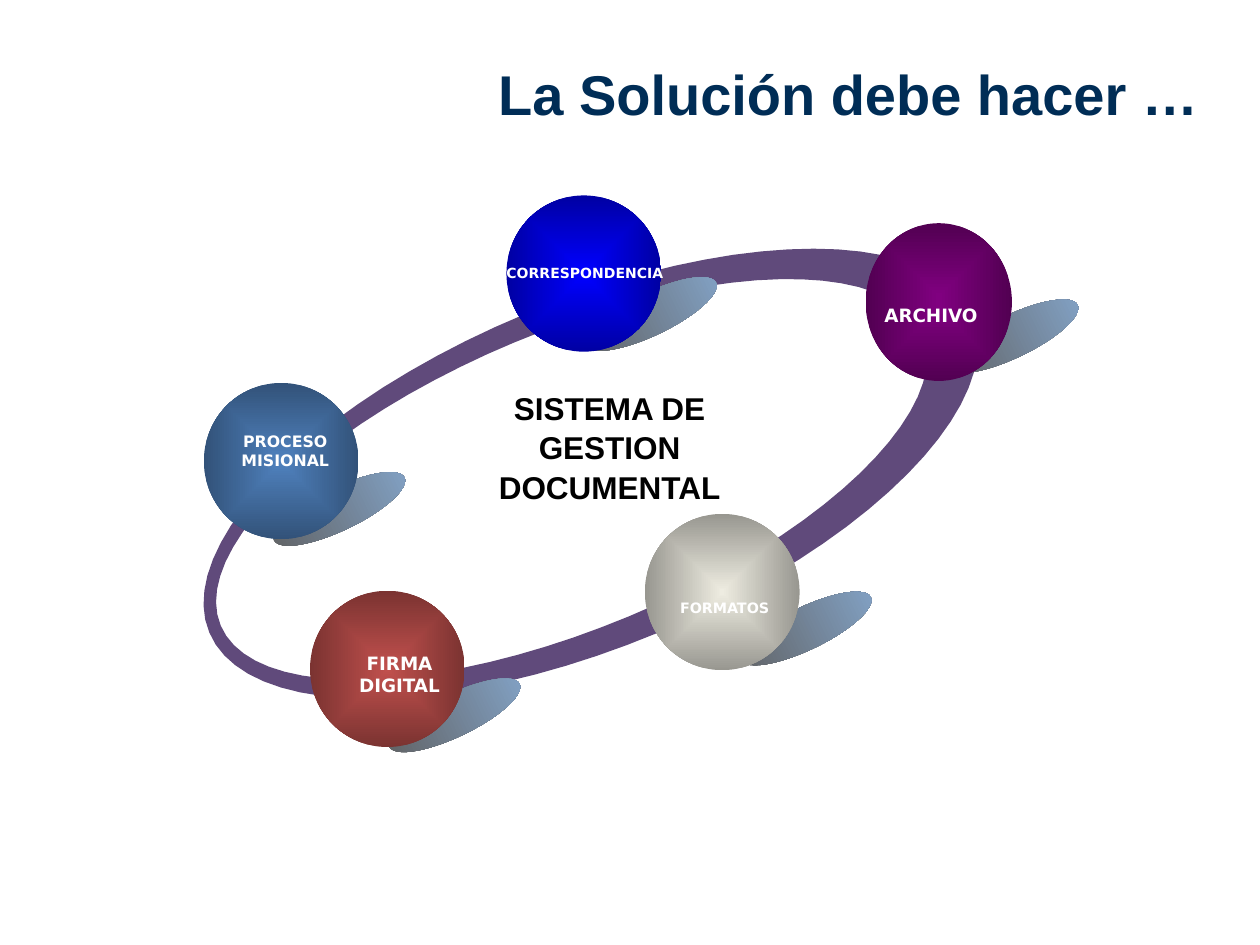
import math
import lxml.etree
import pptx
import pptx.dml.color
import pptx.enum.shapes
import pptx.enum.text
import pptx.oxml
import pptx.oxml.ns
import pptx.util

Cm = pptx.util.Cm
RGB = pptx.dml.color.RGBColor
ALIGN = pptx.enum.text.PP_ALIGN
OVAL = pptx.enum.shapes.MSO_SHAPE.OVAL

WHITE = RGB(0xFF, 0xFF, 0xFF)
BLACK = RGB(0x00, 0x00, 0x00)
NAVY = RGB(0x00, 0x2D, 0x56)
PURPLE = RGB(0x60, 0x4A, 0x7B)
GRAY = RGB(0x5F, 0x5F, 0x5F)
SKY = RGB(0x84, 0xA5, 0xCA)
BLUE = RGB(0x00, 0x00, 0xFF)
STEEL = RGB(0x4F, 0x81, 0xBD)
RED = RGB(0xC0, 0x50, 0x4D)
CREAM = RGB(0xEE, 0xEC, 0xE1)
PLUM = RGB(0x80, 0x00, 0x80)

BALLS = [
    ("CORRESPONDENCIA", 8, ALIGN.LEFT, BLUE,
     (10.21, 3.94, 3.12, 3.15), (1.45, 1.96), (-0.25, 1.27, 3.73, 0.61)),
    ("PROCESO\nMISIONAL", 9, ALIGN.CENTER, STEEL,
     (4.11, 7.72, 3.12, 3.15), (1.27, 2.11), (0.08, 0.86, 3.12, 1.42)),
    ("FIRMA\nDIGITAL", 10.5, ALIGN.CENTER, RED,
     (6.25, 11.91, 3.12, 3.15), (1.45, 2.08), (0.28, 1.12, 3.05, 1.6)),
    ("FORMATOS", 8.2, ALIGN.LEFT, CREAM,
     (13, 10.36, 3.12, 3.15), (1.78, 1.88), (0.46, 1.6, 3.1, 0.84)),
    ("ARCHIVO", 10.5, ALIGN.LEFT, PLUM,
     (17.45, 4.5, 2.95, 3.18), (1.5, 1.85), (0.13, 1.5, 3.28, 0.97)),
]


def write(frame, text, size, color, font="Arial", align=ALIGN.LEFT, wrap=True, space=None):
    frame.word_wrap = wrap
    frame.text = text
    for para in frame.paragraphs:
        para.alignment = align
        para.line_spacing = space
        for run in para.runs:
            run.font.name = font
            run.font.size = pptx.util.Pt(size)
            run.font.bold = True
            run.font.color.rgb = color


def label(slide, box, text, size, color, **form):
    shape = slide.shapes.add_textbox(*map(Cm, box))
    write(shape.text_frame, text, size, color, **form)


def oval(slide, box, start, end):
    shape = slide.shapes.add_shape(OVAL, *map(Cm, box))
    shape.shadow.inherit = False
    shape.line.fill.background()
    shape.fill.gradient()
    shape.fill.gradient_angle = 0
    for stop, color in zip(shape.fill.gradient_stops, (start, end)):
        stop.color.rgb = color
    return shape


def glow(shape):
    qn = pptx.oxml.ns.qn
    grad = shape.fill._xPr.find(qn("a:gradFill"))
    edge = grad.findall(".//" + qn("a:srgbClr"))[-1]
    lxml.etree.SubElement(edge, qn("a:shade")).set("val", "36000")
    tag = pptx.oxml.parse_xml(
        f'<a:path {pptx.oxml.ns.nsdecls("a")} path="shape">'
        '<a:fillToRect l="50000" t="50000" r="50000" b="50000"/></a:path>')
    grad.replace(grad.find(qn("a:lin")), tag)


def ball(slide, box, text, size, align, color, shade, tag):
    left, top = box[:2]
    cast = oval(slide, (left + shade[0], top + shade[1], 2.92, 0.86), GRAY, SKY)
    cast.rotation = 334.3
    glow(oval(slide, box, color, color))
    label(slide, (left + tag[0], top + tag[1], *tag[2:]), text, size, WHITE,
          font="DejaVu Sans", align=align, wrap=False)


def curve(x, y, wide, high, turn):
    steps = 80
    angles = [turn * 2 * math.pi * i / steps for i in range(steps)]
    return [(Cm(x + wide * math.cos(a)), Cm(y + high * math.sin(a))) for a in angles]


def ring(slide, box):
    left, top, wide, high = box
    x, y = left + wide / 2, top + high / 2
    outer = curve(x, y, wide / 2, high / 2, 1)
    inner = curve(x - 0.024 * wide, y - 0.006 * high, 0.46 * wide, 0.43 * high, -1)
    pen = slide.shapes.build_freeform(*outer[0])
    pen.add_line_segments(outer[1:])
    pen.move_to(*inner[0])
    pen.add_line_segments(inner[1:])
    shape = pen.convert_to_shape()
    shape.shadow.inherit = False
    shape.fill.solid()
    shape.fill.fore_color.rgb = PURPLE
    shape.line.fill.background()
    shape.rotation = 337.4


def head(slide, box, text):
    title = slide.shapes.title
    title.left, title.top, title.width, title.height = map(Cm, box)
    frame = title.text_frame
    frame.auto_size = pptx.enum.text.MSO_AUTO_SIZE.NONE
    frame.vertical_anchor = pptx.enum.text.MSO_ANCHOR.MIDDLE
    write(frame, text, 32, NAVY, align=ALIGN.RIGHT)


def main():
    deck = pptx.Presentation()
    deck.slide_width, deck.slide_height = Cm(25.4), Cm(19.05)
    slide = deck.slides.add_slide(deck.slide_layouts[5])
    head(slide, (1.57, 0.28, 22.86, 3.18), "La Solución debe hacer …")
    ring(slide, (3.58, 6.07, 16.66, 6.96))
    for text, size, align, color, box, shade, tag in BALLS:
        ball(slide, box, text, size, align, color, shade, tag)
    label(slide, (9.14, 7.67, 6.3, 4.6), "SISTEMA DE GESTION DOCUMENTAL", 18, BLACK,
          align=ALIGN.CENTER, space=1.05)
    deck.save("out.pptx")


if __name__ == "__main__":
    main()
